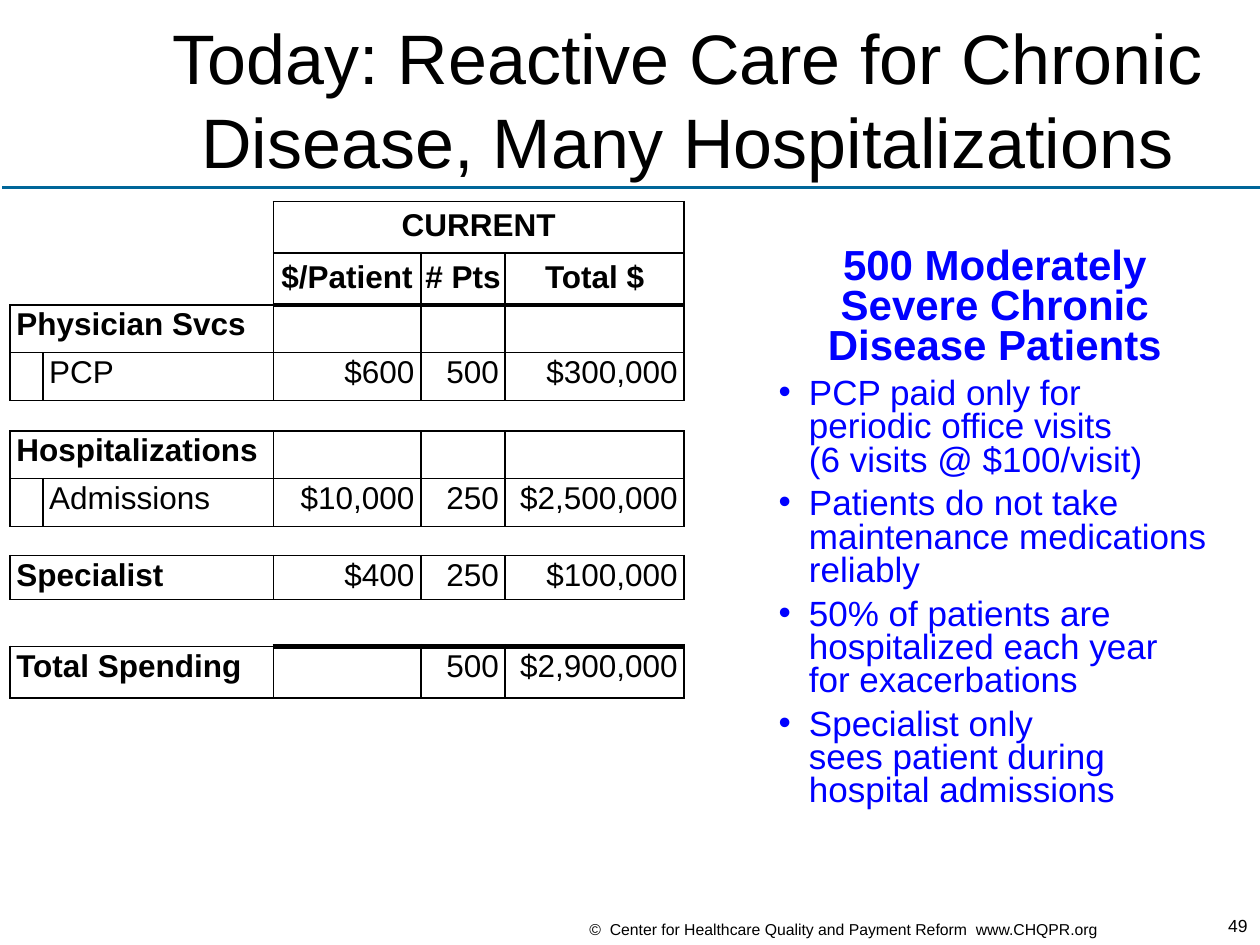
from dataclasses import dataclass
from lxml.etree import SubElement
from pptx import Presentation
from pptx.dml.color import RGBColor as RGB
from pptx.enum.text import MSO_ANCHOR as Anchor, MSO_AUTO_SIZE as Fit, PP_ALIGN as Al
from pptx.oxml import parse_xml
from pptx.oxml.ns import nsdecls, qn
from pptx.util import Inches, Pt


@dataclass(frozen=True)
class Theme:
    font: str = "Arial"
    black: str = "000000"
    white: str = "FFFFFF"
    rule: str = "006699"
    accent: str = "0000FF"
    title: int = 40
    heading: int = 24
    bullet: int = 20
    table: int = 18
    gap: int = 8
    number: int = 10
    credit: int = 9
    thin: float = 1
    thick: float = 3


@dataclass(frozen=True)
class Row:
    height: float
    kind: str
    label: str = ""
    values: tuple[str, ...] = ("", "", "")


T = Theme()
COLS = (0.26, 1.83, 1.17, 0.67, 1.42)
ROWS = (
    Row(0.41, "banner", values=("CURRENT", "", "")),
    Row(0.41, "head", values=("$/Patient", "# Pts", "Total $")),
    Row(0.38, "group", "Physician Svcs"),
    Row(0.38, "item", "PCP", ("$600", "500", "$300,000")),
    Row(0.24, "gap"),
    Row(0.38, "group", "Hospitalizations"),
    Row(0.38, "item", "Admissions", ("$10,000", "250", "$2,500,000")),
    Row(0.23, "gap"),
    Row(0.35, "group", "Specialist", ("$400", "250", "$100,000")),
    Row(0.37, "gap"),
    Row(0.41, "group", "Total Spending", ("", "500", "$2,900,000")),
)
HEAVY_EDGES = (2, len(ROWS) - 1)
POINTS = (
    "PCP paid only for\nperiodic office visits\n(6 visits @ $100/visit)",
    "Patients do not take\nmaintenance medications\nreliably",
    "50% of patients are\nhospitalized each year\nfor exacerbations",
    "Specialist only\nsees patient during\nhospital admissions",
)


def write(p, text: str, *, size: float, color: str = T.black, bold: bool = False,
          align=Al.LEFT, spacing=None, before: float = 0) -> None:
    p.alignment, p.space_before = align, Pt(before)
    if spacing is not None:
        p.line_spacing = spacing
    for i, line in enumerate(text.split("\n")):
        if i:
            p.add_line_break()
        r = p.add_run()
        r.text = line
        r.font.name, r.font.size, r.font.bold = T.font, Pt(size), bold
        r.font.color.rgb = RGB.from_string(color)


def place(s, left: float, top: float, width: float, height: float) -> None:
    s.left, s.top, s.width, s.height = map(Inches, (left, top, width, height))


def set_bullet(p, char: str = "") -> None:
    pr = p._p.get_or_add_pPr()
    pr.set("marL", str(Inches(0.24) if char else 0))
    pr.set("indent", str(Inches(-0.24) if char else 0))
    if char:
        SubElement(pr, qn("a:buChar")).set("char", char)
    else:
        SubElement(pr, qn("a:buNone"))


def edges(i: int, c: int) -> dict[str, float]:
    kind = ROWS[i].kind
    sides = dict.fromkeys("LRTB", T.thin)
    if kind == "gap":
        sides.update(L=0, R=0)
    elif kind in ("banner", "head") and c < 2:
        sides.update(L=0, T=0, R=T.thin if c == 1 else 0,
                     B=T.thin if kind == "head" else 0)
    if c >= 2:
        if i in HEAVY_EDGES:
            sides["T"] = T.thick
        if i + 1 in HEAVY_EDGES:
            sides["B"] = T.thick
    return sides


def style_cell(cell, sides: dict[str, float]) -> None:
    cell.fill.solid()
    cell.fill.fore_color.rgb = RGB.from_string(T.white)
    pr = cell._tc.get_or_add_tcPr()
    for n, (side, width) in enumerate(sides.items()):
        paint = (f'<a:solidFill><a:srgbClr val="{T.black}"/></a:solidFill>'
                 if width else "<a:noFill/>")
        pr.insert(n, parse_xml(
            f'<a:ln{side} {nsdecls("a")} w="{Pt(width)}">{paint}</a:ln{side}>'))


def fill_cell(cell, text: str, kind: str, c: int) -> None:
    p = cell.text_frame.paragraphs[0]
    if not text:
        cell.margin_top = cell.margin_bottom = 0
        SubElement(p._p, qn("a:endParaRPr")).set("sz", str(T.gap * 100))
        return
    header = kind in ("banner", "head")
    cell.margin_top = cell.margin_bottom = Inches(0.05)
    cell.margin_left = Inches(0.05 if c < 2 else 0)
    cell.margin_right = Inches(0 if header else 0.05)
    align = Al.CENTER if header else Al.LEFT if c < 2 else Al.RIGHT
    write(p, text, size=T.table, bold=header or (kind == "group" and c < 2),
          align=align, spacing=None if header else Pt(18))


def add_costs(slide) -> None:
    table = slide.shapes.add_table(
        len(ROWS), len(COLS), Inches(0.08), Inches(1.6), Inches(sum(COLS)),
        Inches(sum(row.height for row in ROWS))).table
    table.first_row = table.horz_banding = False
    for col, width in zip(table.columns, COLS):
        col.width = Inches(width)
    for i, row in enumerate(ROWS):
        table.rows[i].height = Inches(row.height)
        lead = ("", row.label) if row.kind == "item" else (row.label, "")
        for c, text in enumerate(lead + row.values):
            cell = table.cell(i, c)
            style_cell(cell, edges(i, c))
            fill_cell(cell, text, row.kind, c)
        if row.kind == "group":
            table.cell(i, 0).merge(table.cell(i, 1))
    table.cell(0, 2).merge(table.cell(0, 4))
    table.cell(4, 0).merge(table.cell(4, 4))


def add_label(slide, box: tuple[float, ...], text: str, *, wrap: bool, **fmt) -> None:
    tf = slide.shapes.add_textbox(*map(Inches, box)).text_frame
    tf.word_wrap = wrap
    write(tf.paragraphs[0], text, **fmt)


def add_title(slide) -> None:
    s = slide.shapes.title
    place(s, 1, 0.11, 8.91, 1.34)
    tf = s.text_frame
    tf.auto_size, tf.vertical_anchor, tf.word_wrap = Fit.NONE, Anchor.MIDDLE, True
    tf.margin_left = tf.margin_right = 0
    write(tf.paragraphs[0], "Today: Reactive Care for Chronic Disease, Many Hospitalizations",
          size=T.title, align=Al.CENTER)


def add_points(slide) -> None:
    s = slide.placeholders[1]
    place(s, 6.08, 1.92, 3.63, 4.6)
    tf = s.text_frame
    tf.auto_size, tf.vertical_anchor, tf.word_wrap = Fit.NONE, Anchor.TOP, True
    p = tf.paragraphs[0]
    set_bullet(p)
    write(p, "500 Moderately\nSevere Chronic\nDisease Patients", size=T.heading,
          color=T.accent, bold=True, align=Al.CENTER, spacing=Pt(23))
    for text in POINTS:
        p = tf.add_paragraph()
        set_bullet(p, "•")
        write(p, text, size=T.bullet, color=T.accent, spacing=Pt(19), before=6)


def add_rule(slide) -> None:
    s = slide.shapes.add_connector(1, Inches(0.02), Inches(1.49), Inches(10), Inches(1.49))
    s.line.color.rgb = RGB.from_string(T.rule)
    s.line.width = Pt(2)
    SubElement(s._element.spPr, qn("a:effectLst"))


def main() -> None:
    prs = Presentation()
    prs.slide_width, prs.slide_height = Inches(10), Inches(7.5)
    slide = prs.slides.add_slide(prs.slide_layouts[1])
    add_rule(slide)
    add_label(slide, (9.5, 7.25, 0.5, 0.23), "49", wrap=True,
              size=T.number, align=Al.RIGHT, spacing=0.75)
    add_label(slide, (4.58, 7.29, 4.31, 0.21),
              "©  Center for Healthcare Quality and Payment Reform  www.CHQPR.org",
              wrap=False, size=T.credit, spacing=0.7)
    add_title(slide)
    add_costs(slide)
    add_points(slide)
    prs.save("out.pptx")


if __name__ == "__main__":
    main()
